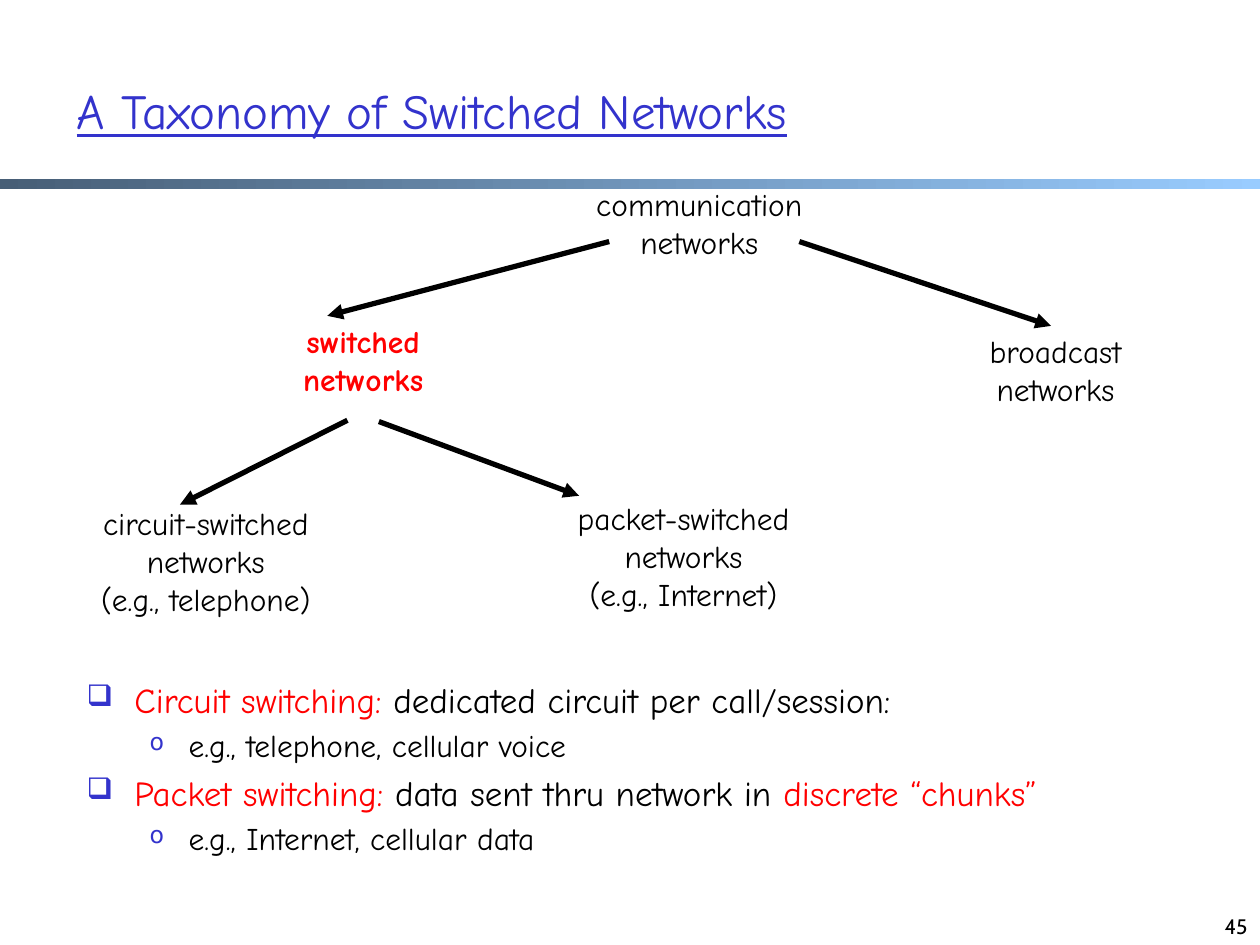
from lxml import etree
from pptx import Presentation
from pptx.dml.color import RGBColor
from pptx.enum.shapes import MSO_CONNECTOR, MSO_SHAPE
from pptx.enum.text import MSO_ANCHOR, PP_ALIGN
from pptx.oxml.ns import qn
from pptx.util import Pt

PX = 9144
RECTANGLE = MSO_SHAPE.RECTANGLE
STRAIGHT = MSO_CONNECTOR.STRAIGHT
LEFT, CENTER, RIGHT = PP_ALIGN.LEFT, PP_ALIGN.CENTER, PP_ALIGN.RIGHT
TOP, BOTTOM = MSO_ANCHOR.TOP, MSO_ANCHOR.BOTTOM

COLORS = {"blue": "3333CC", "red": "FF0000", "black": "000000",
          "bar_start": "475E76", "bar_end": "99CCFF"}
BODY_FONT, NUMBER_FONT = "Comic Neue", "Cabin"

LEVELS = [
    {"size": 20, "margin": 38, "hanging": 38, "bullet": "❑", "bullet_size": 85},
    {"size": 18, "margin": 81, "hanging": 31, "bullet": "o", "bullet_size": 75},
]
POINTS = [
    (0, [("Circuit switching:", "red"),
         (" dedicated circuit per call/session:", "black")]),
    (1, [("e.g., telephone, cellular voice", "black")]),
    (0, [("Packet switching:", "red"),
         (" data sent thru network in ", "black"),
         ("discrete “chunks”", "red")]),
    (1, [("e.g., Internet, cellular data", "black")]),
]
NETWORKS = [
    ((443, 0, 225, 70), "communication networks", {}),
    ((176, 109, 225, 70), "switched\nnetworks", {"color": "red", "bold": True}),
    ((726, 117, 225, 70), "broadcast\nnetworks", {}),
    ((51, 254, 225, 101), "circuit-switched\nnetworks\n(e.g., telephone)", {}),
    ((360, 250, 366, 100), "packet-switched\nnetworks\n(e.g., Internet)", {}),
]
ARROWS = [
    ((484, 50), (260, 109)),
    ((635, 50), (835, 117)),
    ((276, 192), (143, 259)),
    ((301, 193), (460, 252)),
]


def rgb(color):
    return RGBColor.from_string(COLORS[color])


def emu(*lengths):
    return [length * PX for length in lengths]


def format_run(run, color="black", **values):
    for name, value in {"name": BODY_FONT, **values}.items():
        setattr(run.font, name, Pt(value) if name == "size" else value)
    run.font.color.rgb = rgb(color)


def add_text_frame(slide, box, anchor=TOP):
    frame = slide.shapes.add_textbox(*emu(*box)).text_frame
    frame.word_wrap = True
    frame.vertical_anchor = anchor
    return frame


def add_label(slide, box, text, align=LEFT, anchor=TOP, **values):
    paragraph = add_text_frame(slide, box, anchor).paragraphs[0]
    paragraph.text = text
    paragraph.alignment = align
    for run in paragraph.runs:
        format_run(run, **values)


def add_header(slide, box):
    left, top, width, height = box
    bar = slide.shapes.add_shape(RECTANGLE, *emu(left, top + height - 8, width, 8))
    bar.shadow.inherit = False
    bar.line.fill.background()
    bar.fill.gradient()
    bar.fill.gradient_angle = 0
    for stop, color, position in zip(bar.fill.gradient_stops,
                                     ("bar_start", "bar_end"), (0, 1)):
        stop.color.rgb = rgb(color)
        stop.position = position
    add_label(slide, (left + 51, top + 59, 851, 66),
              "A Taxonomy of Switched Networks",
              size=28, color="blue", underline=True)


def add_arrow(slide, start, end):
    arrow = slide.shapes.add_connector(STRAIGHT, *emu(*start, *end))
    arrow.line.color.rgb = rgb("black")
    arrow.line.width = Pt(3)
    etree.SubElement(arrow.line._get_or_add_ln(), qn("a:tailEnd"), type="triangle")
    etree.SubElement(arrow._element.spPr, qn("a:effectLst"))


def add_taxonomy(slide, box):
    left, top = box[:2]
    for (x, y, width, height), text, values in NETWORKS:
        add_label(slide, (left + x, top + y, width, height), text,
                  align=CENTER, size=18, **values)
    for ends in ARROWS:
        add_arrow(slide, *[(left + x, top + y) for x, y in ends])


def add_bullet(paragraph, level):
    properties = paragraph._p.get_or_add_pPr()
    properties.set("marL", str(level["margin"] * PX))
    properties.set("indent", str(-level["hanging"] * PX))
    color = etree.SubElement(properties, qn("a:buClr"))
    etree.SubElement(color, qn("a:srgbClr"), val=COLORS["blue"])
    etree.SubElement(properties, qn("a:buSzPct"), val=str(level["bullet_size"] * 1000))
    etree.SubElement(properties, qn("a:buChar"), char=level["bullet"])


def add_points(slide, box):
    frame = add_text_frame(slide, box)
    for index, (depth, runs) in enumerate(POINTS):
        level = LEVELS[depth]
        paragraph = frame.add_paragraph() if index else frame.paragraphs[0]
        paragraph.level = depth
        add_bullet(paragraph, level)
        if index:
            paragraph.space_before = Pt(level["size"] * 0.2)
        for text, color in runs:
            run = paragraph.add_run()
            run.text = text
            format_run(run, color, size=level["size"])


def main():
    presentation = Presentation()
    presentation.slide_width, presentation.slide_height = emu(1001, 751)
    slide = presentation.slides.add_slide(presentation.slide_layouts[6])
    add_header(slide, (0, 0, 1001, 150))
    add_taxonomy(slide, (0, 142, 1001, 355))
    add_points(slide, (59, 534, 900, 167))
    add_label(slide, (768, 701, 233, 50), "45", align=RIGHT, anchor=BOTTOM,
              size=12, name=NUMBER_FONT)
    presentation.save("out.pptx")


if __name__ == "__main__":
    main()
